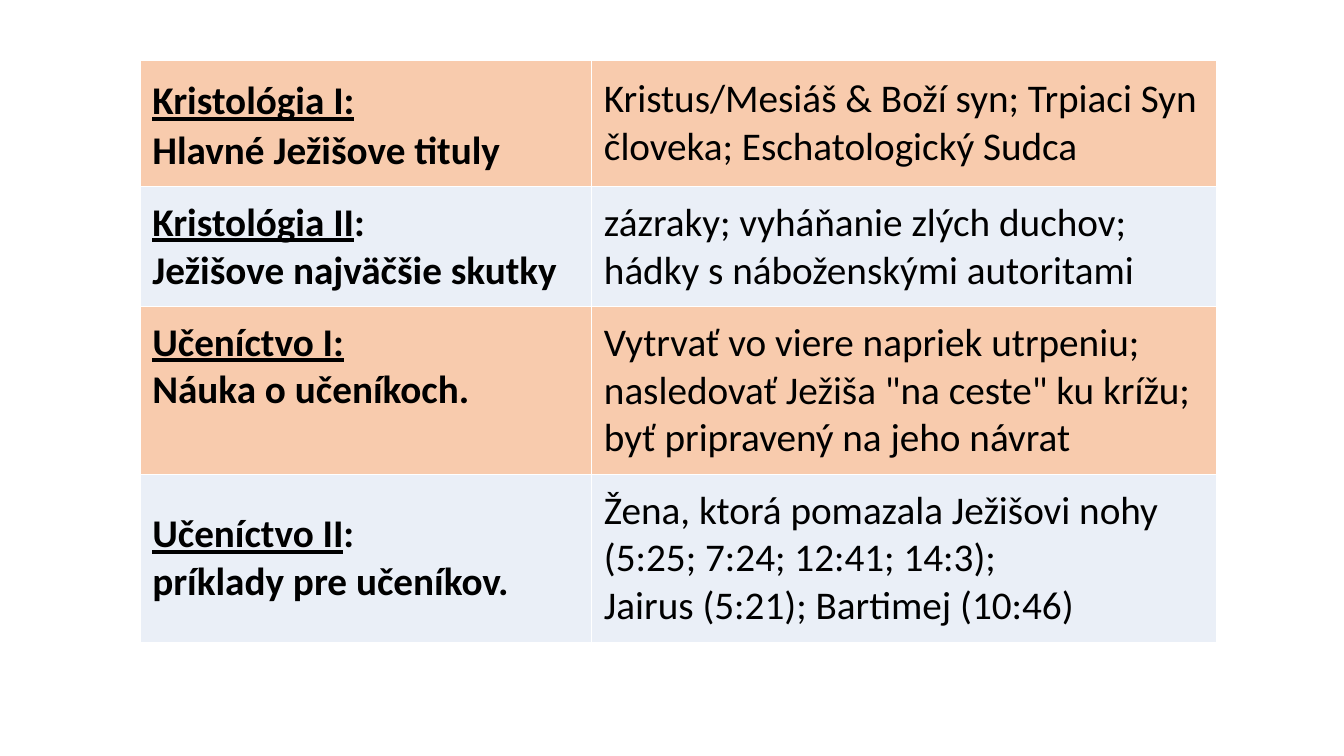
import pptx
import pptx.dml.color
import pptx.enum.text
import pptx.oxml
import pptx.oxml.ns
import pptx.util
from dataclasses import dataclass

Pt = pptx.util.Pt

TOPICS = [
    ("Kristológia I:", " ", "Hlavné Ježišove tituly",
     ["Kristus/Mesiáš & Boží syn; Trpiaci Syn človeka; Eschatologický Sudca"]),
    ("Kristológia II", ":", "Ježišove najväčšie skutky",
     ["zázraky; vyháňanie zlých duchov; hádky s náboženskými autoritami"]),
    ("Učeníctvo I:", "", "Náuka o učeníkoch.",
     ['Vytrvať vo viere napriek utrpeniu; nasledovať Ježiša "na ceste" ku krížu; byť pripravený na jeho návrat']),
    ("Učeníctvo II", ":", "príklady pre učeníkov.",
     ["Žena, ktorá pomazala Ježišovi nohy (5:25; 7:24; 12:41; 14:3);",
      "Jairus (5:21); Bartimej (10:46)"]),
]
TOP_ANCHORED_TOPIC = "Učeníctvo I:"

SLIDE_SIZE = (960, 540)
TABLE_ORIGIN = (100.2, 42.8)
COLUMN_WIDTHS = [322.6, 446.4]
ROW_HEIGHTS = [89.5, 85.7, 119.8, 119.8]
CELL_MARGIN = 8.64


@dataclass(frozen=True)
class Theme:
    font: str = "Calibri"
    text_size: int = 28
    spacer_size: int = 32
    border_width: int = 1
    text: str = "000000"
    border: str = "FFFFFF"
    row_fills: tuple = ("F8CBAD", "EAEFF7")


THEME = Theme()


def add_run(paragraph, text, bold=False, underline=False):
    run = paragraph.add_run()
    run.text = text
    font = run.font
    font.name = THEME.font
    font.size = Pt(THEME.text_size if text.strip() else THEME.spacer_size)
    font.bold = bold
    font.underline = underline
    font.color.rgb = pptx.dml.color.RGBColor.from_string(THEME.text)


def style_cell(cell, fill_color):
    cell.margin_left = cell.margin_right = Pt(CELL_MARGIN)
    cell.margin_top = cell.margin_bottom = Pt(CELL_MARGIN)
    cell.vertical_anchor = pptx.enum.text.MSO_ANCHOR.MIDDLE
    properties = cell._tc.get_or_add_tcPr()
    for side in ("lnL", "lnR", "lnT", "lnB"):
        properties.append(pptx.oxml.parse_xml(
            f'<a:{side} {pptx.oxml.ns.nsdecls("a")} w="{Pt(THEME.border_width)}">'
            f'<a:solidFill><a:srgbClr val="{THEME.border}"/></a:solidFill></a:{side}>'))
    cell.fill.solid()
    cell.fill.fore_color.rgb = pptx.dml.color.RGBColor.from_string(fill_color)


def fill_topic(cell, heading, suffix, description):
    paragraph = cell.text_frame.paragraphs[0]
    add_run(paragraph, heading, bold=True, underline=True)
    if suffix:
        add_run(paragraph, suffix, bold=True)
    paragraph.add_line_break()
    add_run(paragraph, description, bold=True)
    if heading == TOP_ANCHORED_TOPIC:
        cell.vertical_anchor = pptx.enum.text.MSO_ANCHOR.TOP


def fill_details(cell, lines):
    paragraph = cell.text_frame.paragraphs[0]
    for index, line in enumerate(lines):
        if index:
            paragraph.add_line_break()
        add_run(paragraph, line)


def add_topic_table(slide):
    left, top = TABLE_ORIGIN
    table = slide.shapes.add_table(
        len(TOPICS), len(COLUMN_WIDTHS), Pt(left), Pt(top),
        Pt(sum(COLUMN_WIDTHS)), Pt(sum(ROW_HEIGHTS))).table
    table.first_row = False
    table.horz_banding = False
    for column, width in zip(table.columns, COLUMN_WIDTHS):
        column.width = Pt(width)
    for index, (heading, suffix, description, details) in enumerate(TOPICS):
        row = table.rows[index]
        row.height = Pt(ROW_HEIGHTS[index])
        topic_cell, details_cell = row.cells
        for cell in (topic_cell, details_cell):
            style_cell(cell, THEME.row_fills[index % len(THEME.row_fills)])
        fill_topic(topic_cell, heading, suffix, description)
        fill_details(details_cell, details)


def main():
    presentation = pptx.Presentation()
    presentation.slide_width, presentation.slide_height = map(Pt, SLIDE_SIZE)
    slide = presentation.slides.add_slide(presentation.slide_layouts[6])
    add_topic_table(slide)
    presentation.save("out.pptx")


if __name__ == "__main__":
    main()
